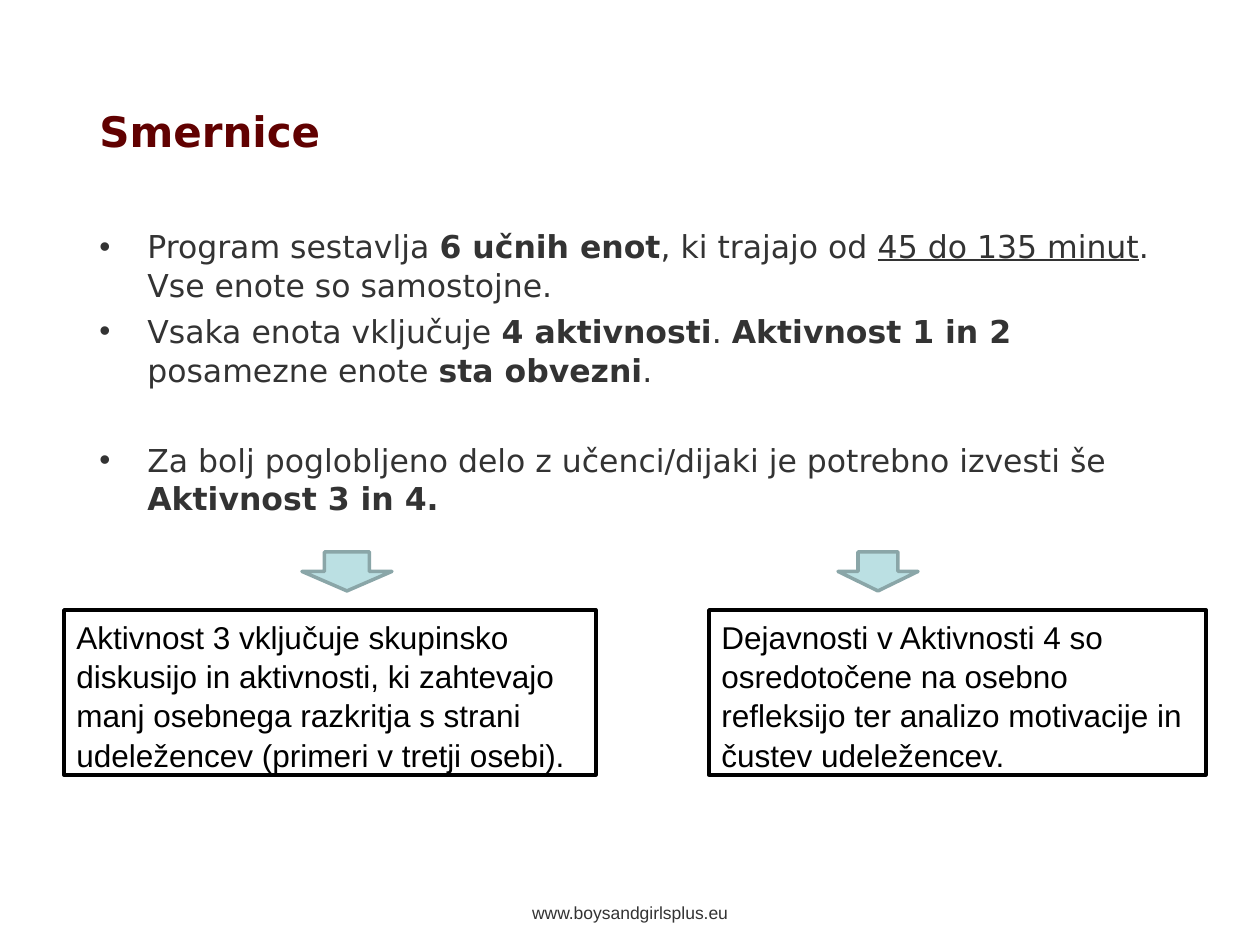
from lxml.etree import SubElement
from pptx import Presentation
from pptx.dml.color import RGBColor
from pptx.enum.shapes import MSO_SHAPE as Shape
from pptx.enum.text import MSO_ANCHOR as Anchor, PP_ALIGN as Align
from pptx.oxml.ns import qn
from pptx.util import Emu, Pt

PX = 914400 // 126
WHITE = RGBColor(0xFF, 0xFF, 0xFF)
BLACK = RGBColor(0x00, 0x00, 0x00)
GREY = RGBColor(0x33, 0x33, 0x33)
MAROON = RGBColor(0x61, 0x01, 0x01)
TEAL = RGBColor(0xBB, 0xE0, 0xE3)
DARK_TEAL = RGBColor(0x8A, 0xA6, 0xA8)
HEADING_FONT = "DejaVu Sans"
PLAIN_FONT = "Arial"

BULLETS = [
    (0, [("Program sestavlja ", ""), ("6 učnih enot", "bold"), (", ki trajajo od ", ""),
         ("45 do 135 minut", "underline"), (". Vse enote so samostojne.", "")]),
    (4, [("Vsaka enota vključuje ", ""), ("4 aktivnosti", "bold"), (". ", ""),
         ("Aktivnost 1 in 2 ", "bold"), ("posamezne enote ", ""),
         ("sta obvezni", "bold"), (".", "")]),
    (29, [("Za bolj poglobljeno delo z učenci/dijaki je potrebno izvesti še ", ""),
          ("Aktivnost 3 in 4.", "bold")]),
]
ACTIVITIES = [
    (64, 532, 302, 90, "Aktivnost 3 vključuje skupinsko diskusijo in aktivnosti, ki zahtevajo "
     "manj osebnega razkritja s strani udeležencev (primeri v tretji osebi)."),
    (709, 497, 838, 80, "Dejavnosti v Aktivnosti 4 so osredotočene na osebno refleksijo ter "
     "analizo motivacije in čustev udeležencev."),
]


def px(*lengths):
    return [Emu(length * PX) for length in lengths]


def set_font(paragraph, name, size, color):
    font = paragraph.font
    font.name, font.size = name, Pt(size)
    font.color.rgb = color


def add_text(page, bounds, text, name, size, color):
    box = page.shapes.add_textbox(*px(*bounds))
    frame = box.text_frame
    frame.word_wrap = True
    frame.vertical_anchor = Anchor.MIDDLE
    para = frame.paragraphs[0]
    para.text = text
    set_font(para, name, size, color)
    return para


def add_bullets(page, bounds, bullets):
    frame = page.shapes.add_textbox(*px(*bounds)).text_frame
    frame.word_wrap = True
    for index, (space, spans) in enumerate(bullets):
        para = frame.add_paragraph() if index else frame.paragraphs[0]
        properties = para._p.get_or_add_pPr()
        properties.set("marL", str(48 * PX))
        properties.set("indent", str(-48 * PX))
        SubElement(properties, qn("a:buFont"), typeface=PLAIN_FONT)
        SubElement(properties, qn("a:buChar"), char="•")
        set_font(para, HEADING_FONT, 18, GREY)
        para.line_spacing = 1.03
        if space:
            para.space_before = Pt(space)
        for text, style in spans:
            span = para.add_run()
            span.text = text
            if style:
                setattr(span.font, style, True)


def add_shape(page, kind, bounds, fill, line):
    shape = page.shapes.add_shape(kind, *px(*bounds))
    shape.shadow.inherit = False
    shape.fill.solid()
    shape.fill.fore_color.rgb = fill
    shape.line.color.rgb = line
    shape.line.width = Pt(2)
    return shape


def add_activity(page, left, width, arrow_left, arrow_width, text):
    box = add_shape(page, Shape.RECTANGLE, (left, 610, width, 165), WHITE, BLACK)
    frame = box.text_frame
    frame.word_wrap = True
    frame.vertical_anchor = Anchor.TOP
    para = frame.paragraphs[0]
    para.text = text
    para.alignment = Align.LEFT
    para.line_spacing = 1.04
    set_font(para, PLAIN_FONT, 18, BLACK)
    add_shape(page, Shape.DOWN_ARROW, (arrow_left, 552, arrow_width, 39), TEAL, DARK_TEAL)


def main():
    deck = Presentation()
    deck.slide_width, deck.slide_height = px(1260, 945)
    page = deck.slides.add_slide(deck.slide_layouts[6])
    footer = add_text(page, (518, 895, 224, 34), "www.boysandgirlsplus.eu", PLAIN_FONT, 10, GREY)
    footer.alignment = Align.CENTER
    title = add_text(page, (87, 101, 1086, 59), "Smernice", HEADING_FONT, 24, MAROON)
    title.font.bold = True
    add_bullets(page, (87, 220, 1086, 630), BULLETS)
    for activity in ACTIVITIES:
        add_activity(page, *activity)
    deck.save("out.pptx")


if __name__ == "__main__":
    main()
